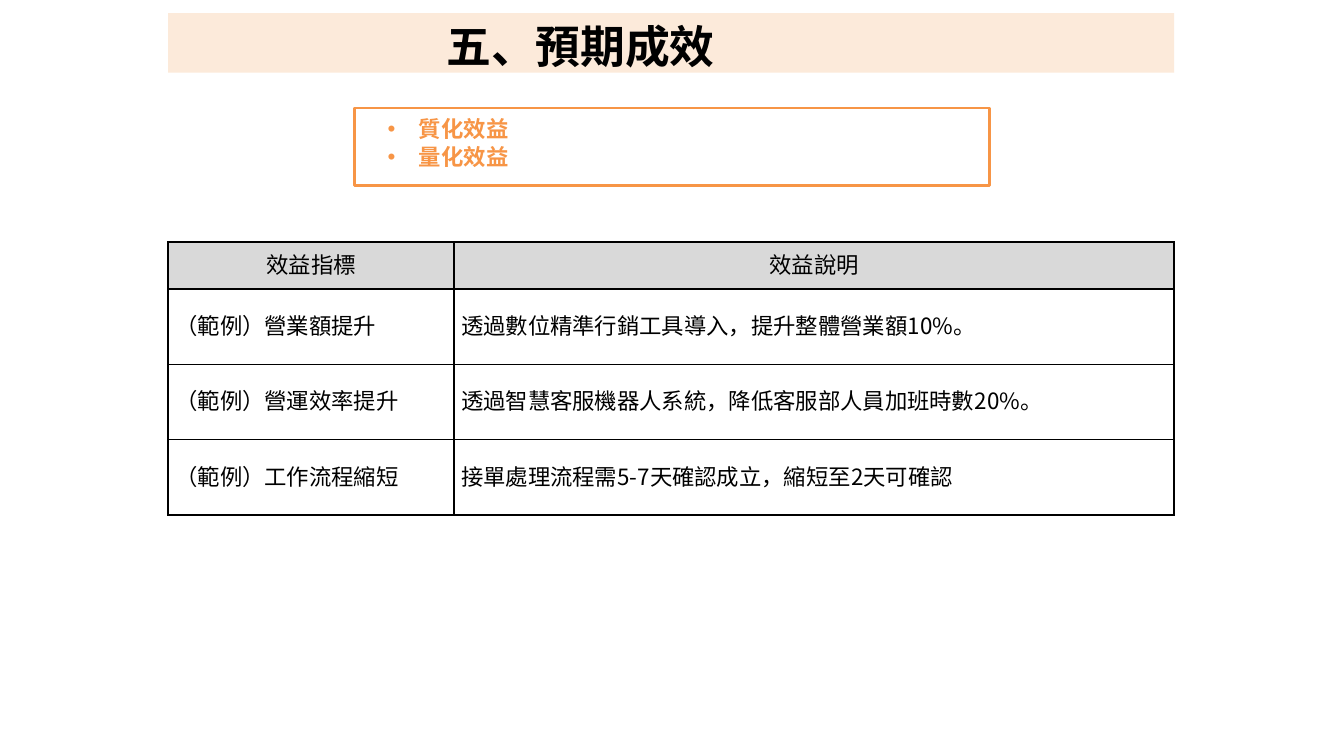
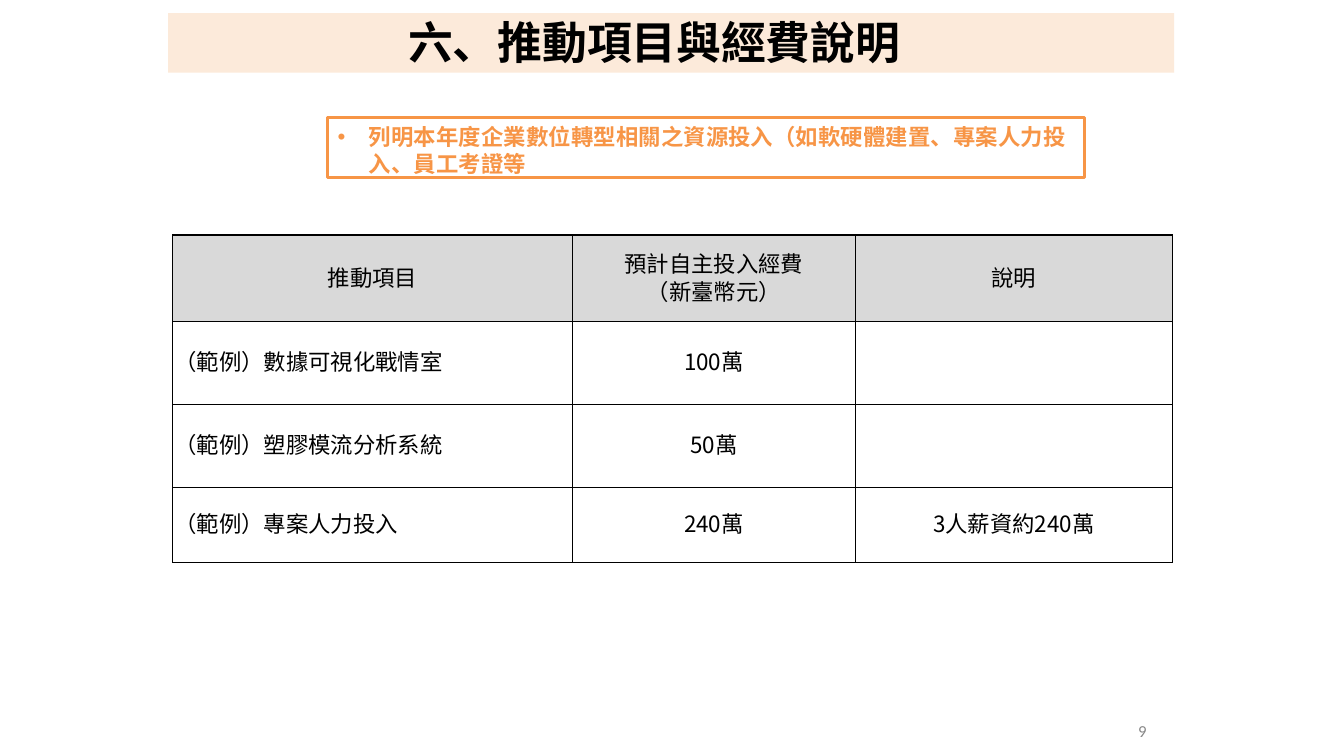
"""Builds two slides on expected benefits and project budget."""
from dataclasses import dataclass

from lxml import etree
from pptx import Presentation
from pptx import util as u
from pptx.dml.color import RGBColor
from pptx.enum import shapes, text
from pptx.oxml.ns import qn

LEFT, CENTER, RIGHT = text.PP_ALIGN.LEFT, text.PP_ALIGN.CENTER, text.PP_ALIGN.RIGHT


@dataclass(frozen=True)
class Theme:
    """Colours, fonts and type sizes of the deck."""
    ink: str = "000000"
    accent: str = "F79546"
    band: str = "FCEADA"
    header: str = "D9D9D9"
    paper: str = "FFFFFF"
    muted: str = "888888"
    font: str = "Noto Sans CJK SC"
    number_font: str = "Calibri"
    title_size: float = 32
    body_size: float = 16
    number_size: float = 12
    frame_line: float = 1.92
    row_pitch: float = 20


@dataclass(frozen=True)
class Box:
    """A rectangle in centimetres."""
    left: float
    top: float
    width: float
    height: float

    def lengths(self):
        """Return the four measures as lengths."""
        return [u.Cm(n) for n in (self.left, self.top, self.width, self.height)]


THEME = Theme()
BAND = Box(4.24, 0.33, 25.35, 1.5)


def paint(fill, colour):
    """Fill with one solid colour."""
    fill.solid()
    fill.fore_color.rgb = RGBColor.from_string(colour)


def write(paragraph, words, *, size=THEME.body_size, colour=THEME.ink,
          font=THEME.font, bold=False, align=LEFT, before=0, pitch=None, tracking=0):
    """Add formatted words to a paragraph."""
    paragraph.alignment = align
    paragraph.space_before = u.Pt(before)
    if pitch:
        paragraph.line_spacing = u.Pt(pitch)
    run = paragraph.add_run()
    run.text = words
    run.font.size = u.Pt(size)
    run.font.bold = bold
    run.font.name = font
    run.font.color.rgb = RGBColor.from_string(colour)
    props = run.font._element
    etree.SubElement(props, qn("a:ea"), typeface=font)
    if tracking:
        props.set("spc", str(round(tracking * 100)))


def write_lines(frame, lines, **style):
    """Write each line as its own paragraph and return the paragraphs."""
    for index, line in enumerate(lines):
        paragraph = frame.add_paragraph() if index else frame.paragraphs[0]
        write(paragraph, line, **style)
    return frame.paragraphs


def set_frame(frame, left=0, top=0):
    """Anchor wrapped text at the top with the given insets."""
    frame.word_wrap = True
    frame.auto_size = text.MSO_AUTO_SIZE.NONE
    frame.vertical_anchor = text.MSO_ANCHOR.TOP
    frame.margin_left, frame.margin_top = u.Cm(left), u.Cm(top)
    frame.margin_right = frame.margin_bottom = 0


def add_rectangle(slide, box):
    """Add a plain rectangle without shadow."""
    rectangle = slide.shapes.add_shape(shapes.MSO_SHAPE.RECTANGLE, *box.lengths())
    rectangle.shadow.inherit = False
    return rectangle


def add_title_slide(deck, heading, box):
    """Add a slide with the title band and its heading."""
    slide = deck.slides.add_slide(deck.slide_layouts[5])
    band = add_rectangle(slide, BAND)
    paint(band.fill, THEME.band)
    band.line.fill.background()
    slide.shapes._spTree.insert(2, band._element)
    title = slide.shapes.title
    title.left, title.top, title.width, title.height = box.lengths()
    set_frame(title.text_frame, top=0.03)
    write(title.text_frame.paragraphs[0], heading, size=THEME.title_size,
          bold=True, before=0.9, tracking=-0.1)
    return slide


def add_hints(slide, box, hints, left=0, top=0, before=0):
    """Add the framed bullet list of writing hints."""
    frame = add_rectangle(slide, box)
    frame.fill.background()
    frame.line.color.rgb = RGBColor.from_string(THEME.accent)
    frame.line.width = u.Pt(THEME.frame_line)
    set_frame(frame.text_frame, left, top)
    for paragraph in write_lines(frame.text_frame, hints, colour=THEME.accent,
                                 bold=True, before=before, tracking=0.1):
        props = paragraph._p.get_or_add_pPr()
        props.set("marL", str(u.Cm(1.04)))
        props.set("indent", str(u.Cm(-0.79)))
        etree.SubElement(props, qn("a:buFont"), typeface="Arial")
        etree.SubElement(props, qn("a:buChar"), char="•")


def set_borders(cell, widths):
    """Draw the left, right, top and bottom borders of a cell."""
    props = cell._tc.get_or_add_tcPr()
    for index, (side, width) in enumerate(zip("LRTB", widths)):
        line = etree.Element(qn(f"a:ln{side}"), w=str(u.Pt(width)))
        solid = etree.SubElement(line, qn("a:solidFill"))
        etree.SubElement(solid, qn("a:srgbClr"), val=THEME.ink)
        props.insert(index, line)


def add_grid(slide, box, rows, widths, heights, aligns, inset, outer=1, inner=1):
    """Add a ruled table whose first row is a shaded header."""
    last_row, last_column = len(rows) - 1, len(widths) - 1
    table = slide.shapes.add_table(len(rows), len(widths), *box.lengths()).table
    table.first_row = table.horz_banding = False
    for column, width in zip(table.columns, widths):
        column.width = u.Cm(width)
    for r, (row, height) in enumerate(zip(rows, heights)):
        table.rows[r].height = u.Cm(height)
        for c, words in enumerate(row):
            cell = table.cell(r, c)
            cell.vertical_anchor = text.MSO_ANCHOR.MIDDLE
            cell.margin_left = cell.margin_right = u.Cm(inset)
            cell.margin_top = cell.margin_bottom = 0
            paint(cell.fill, THEME.paper if r else THEME.header)
            edges = (c == 0, c == last_column, r == 0, r == last_row)
            set_borders(cell, [outer if edge else inner for edge in edges])
            if words:
                write_lines(cell.text_frame, words.split("\n"), pitch=THEME.row_pitch,
                            align=aligns[c] if r else CENTER)


def add_page_number(slide, box, number):
    """Add the page number."""
    frame = slide.shapes.add_textbox(*box.lengths()).text_frame
    set_frame(frame)
    write(frame.paragraphs[0], number, size=THEME.number_size, colour=THEME.muted,
          font=THEME.number_font, align=RIGHT, pitch=12.4)


def add_benefits_slide(deck):
    """Add the slide on expected benefits."""
    slide = add_title_slide(deck, "五、預期成效", Box(11.25, 0.43, 11.33, 1.42))
    add_hints(slide, Box(8.94, 2.72, 16, 1.95), ["質化效益", "量化效益"],
              left=0.58, top=0.18, before=1.1)
    rows = [
        ("效益指標", "效益說明"),
        ("（範例）營業額提升", "透過數位精準行銷工具導入，提升整體營業額10%。"),
        ("（範例）營運效率提升", "透過智慧客服機器人系統，降低客服部人員加班時數20%。"),
        ("（範例）工作流程縮短", "接單處理流程需5-7天確認成立，縮短至2天可確認"),
    ]
    add_grid(slide, Box(4.24, 6.1, 25.35, 6.88), rows, [7.2, 18.15],
             [1.18] + [1.9] * 3, [LEFT, LEFT], inset=0.18, outer=1.5)


def add_budget_slide(deck):
    """Add the slide on projects and their budget."""
    slide = add_title_slide(deck, "六、推動項目與經費說明", Box(10.29, 0.33, 13.26, 1.4))
    add_hints(slide, Box(8.26, 2.97, 19.08, 1.5),
              ["列明本年度企業數位轉型相關之資源投入（如軟硬體建置、專案人力投入、員工考證等"],
              top=0.13, before=3.3)
    rows = [
        ("推動項目", "預計自主投入經費\n（新臺幣元）", "說明"),
        ("（範例）數據可視化戰情室", "100萬", ""),
        ("（範例）塑膠模流分析系統", "50萬", ""),
        ("（範例）專案人力投入", "240萬", "3人薪資約240萬"),
    ]
    add_grid(slide, Box(4.35, 5.92, 25.2, 8.26), rows, [10.08, 7.12, 8],
             [2.19, 2.09, 2.09, 1.89], [LEFT, CENTER, CENTER], inset=0.05)
    add_page_number(slide, Box(28.4, 18.24, 0.5, 0.5), "9")


def main():
    """Build and save the deck."""
    deck = Presentation()
    deck.slide_width, deck.slide_height = u.Cm(33.87), u.Cm(19.05)
    add_benefits_slide(deck)
    add_budget_slide(deck)
    deck.save("out.pptx")


if __name__ == "__main__":
    main()
